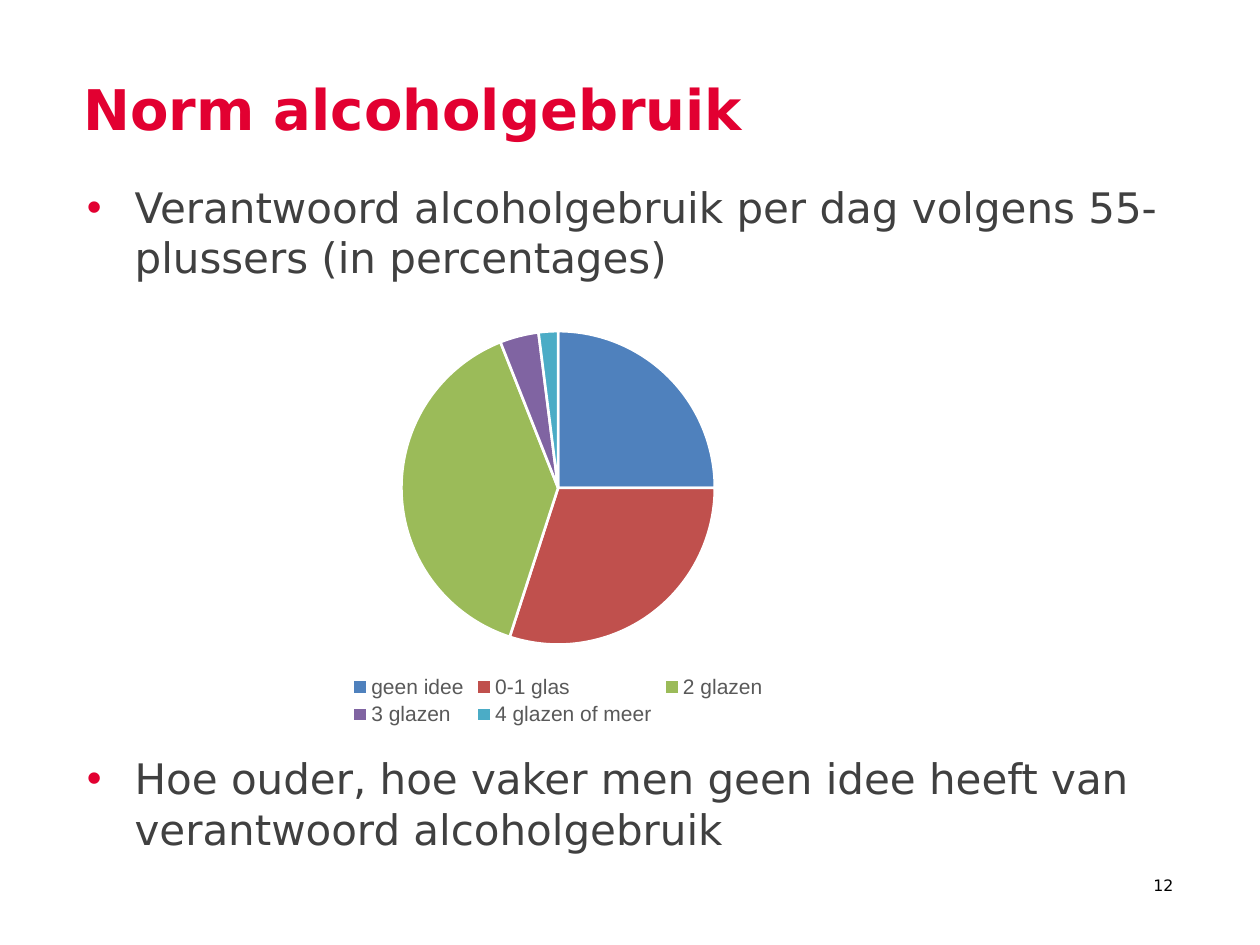
import pptx
import pptx.chart.data
import pptx.dml.color
import pptx.enum.chart
import pptx.enum.text
import pptx.oxml
import pptx.oxml.ns
import pptx.util
from pptx.util import Inches

# Content
TITLE = "Norm alcoholgebruik"
POINTS = [
    "Verantwoord alcoholgebruik per dag volgens 55-plussers (in percentages)",
    "Hoe ouder, hoe vaker men geen idee heeft van verantwoord alcoholgebruik",
]
NORMS = [
    ("geen idee", 25, "4F81BD"),
    ("0-1 glas", 30, "C0504D"),
    ("2 glazen", 39, "9BBB59"),
    ("3 glazen", 4, "8064A2"),
    ("4 glazen of meer", 2, "4BACC6"),
]
PAGE = "12"

THEME = {
    "font": "DejaVu Sans", "chart font": "Arial",
    "red": "E20031", "text": "404040", "black": "000000",
    "label": "595959", "white": "FFFFFF",
    "title": 32, "body": 24, "legend": 12, "page": 9,
}
LEFT, WIDTH = 0.59, 8.82
CHART_GAP = 269  # points kept free between the bullets for the pie


def color(name):
    return pptx.dml.color.RGBColor.from_string(THEME.get(name, name))


def style(font, size, tint, face="font", bold=False):
    font.name = THEME[face]
    font.size = pptx.util.Pt(THEME[size])
    font.color.rgb = color(tint)
    font.bold = bold


def add_text(slide, area, lines, size, tint, inset=(0.1, 0.05), bold=False):
    box = slide.shapes.add_textbox(*map(Inches, area))
    frame = box.text_frame
    frame.word_wrap = True
    frame.margin_left, frame.margin_top = map(Inches, inset)
    frame.text = "\n".join(lines)
    for par in frame.paragraphs:
        for run in par.runs:
            style(run.font, size, tint, bold=bold)
    return frame


def add_bullet(par):
    props = par._p.get_or_add_pPr()
    props.set("marL", str(Inches(0.38)))
    props.set("indent", str(-Inches(0.38)))
    space = pptx.oxml.ns.nsdecls("a")
    for xml in (
        f'<a:buClr {space}><a:srgbClr val="{THEME["red"]}"/></a:buClr>',
        f'<a:buFont {space} typeface="{THEME["chart font"]}"/>',
        f'<a:buChar {space} char="•"/>',
    ):
        props.append(pptx.oxml.parse_xml(xml))


def add_pie(slide):
    names, values, tints = zip(*NORMS)
    data = pptx.chart.data.CategoryChartData()
    data.categories = names
    data.add_series("Series 1", values)
    kind = pptx.enum.chart.XL_CHART_TYPE.PIE
    area = map(Inches, (1.61, 2.49, 5.64, 3.31))
    chart = slide.shapes.add_chart(kind, *area, data).chart
    chart.has_title = False
    style(chart.font, "legend", "label", "chart font")

    # Slices
    plot = chart.plots[0]
    plot.vary_by_categories = True
    for index, tint in enumerate(tints):
        slice_ = plot.series[0].points[index].format
        slice_.fill.solid()
        slice_.fill.fore_color.rgb = color(tint)
        slice_.line.color.rgb = color("white")
        slice_.line.width = pptx.util.Pt(1.5)

    # Legend
    chart.has_legend = True
    chart.legend.position = pptx.enum.chart.XL_LEGEND_POSITION.BOTTOM
    chart.legend.include_in_layout = False
    style(chart.legend.font, "legend", "label", "chart font")


def main():
    deck = pptx.Presentation()
    deck.slide_width, deck.slide_height = Inches(10), Inches(7.5)
    slide = deck.slides.add_slide(deck.slide_layouts[6])

    # Page number
    page = add_text(slide, (8.62, 6.9, 0.79, 0.4), [PAGE], "page", "black")
    page.paragraphs[0].alignment = pptx.enum.text.PP_ALIGN.RIGHT

    # Title
    add_text(slide, (LEFT, 0.52, WIDTH, 1.26), [TITLE], "title", "red",
             inset=(0.07, 0.07), bold=True)

    # Bullets above and below the pie
    body = add_text(slide, (LEFT, 1.39, WIDTH, 4.52), POINTS, "body", "text")
    for par in body.paragraphs:
        add_bullet(par)
    body.paragraphs[1].space_before = pptx.util.Pt(CHART_GAP)

    add_pie(slide)
    deck.save("out.pptx")


if __name__ == "__main__":
    main()
